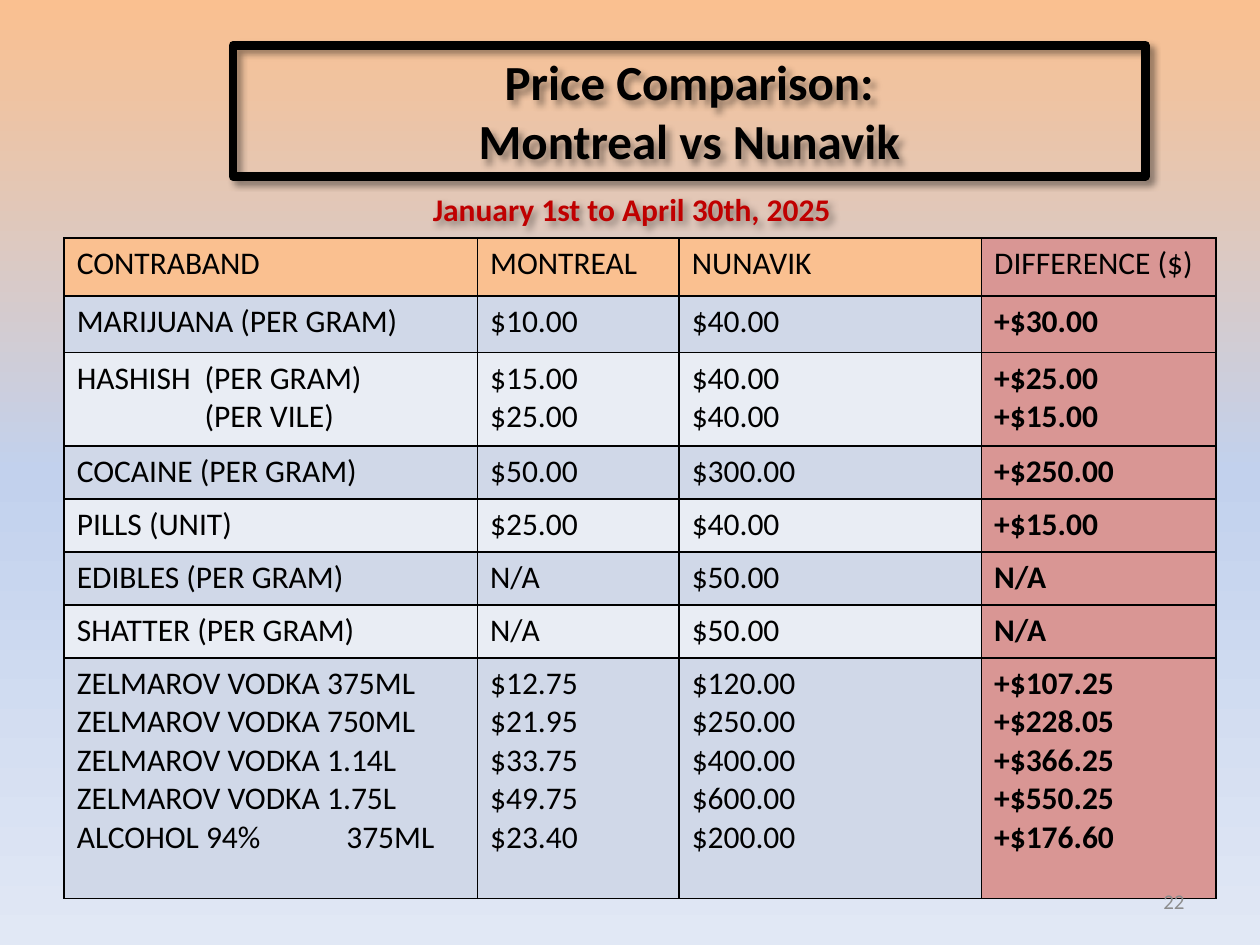
"""Build the Montreal and Nunavik price comparison slide."""
from copy import deepcopy
from dataclasses import dataclass
from typing import Optional

from lxml.etree import SubElement
from pptx import Presentation
from pptx.dml.color import RGBColor
from pptx.enum.shapes import MSO_SHAPE
from pptx.enum.text import MSO_ANCHOR, PP_ALIGN
from pptx.oxml import parse_xml
from pptx.oxml.ns import nsdecls, qn
from pptx.util import Pt

FONT = "Calibri"
COLOURS = {
    "black": "000000",
    "red": "C00000",
    "grey": "8C8C8C",
    "header": "FAC090",
    "difference": "D99694",
    "dark band": "D0D8E8",
    "light band": "E9EDF4",
    "sky middle": "C2D1ED",
    "sky bottom": "E1E8F5",
}
BACKGROUND = ((0, "header"), (0.5, "sky middle"), (1, "sky bottom"))
COLUMN_WIDTHS = (236.2, 115.2, 172.8, 133.9)


@dataclass(frozen=True)
class Label:
    text: str
    left: float
    top: float
    width: float
    height: float
    size: float
    colour: str
    align: PP_ALIGN
    bold: bool = True
    anchor: MSO_ANCHOR = MSO_ANCHOR.TOP
    right_margin: float = 7.2
    outline: Optional[float] = None
    shadow: bool = True


@dataclass(frozen=True)
class PriceRow:
    height: float
    texts: tuple[str, str, str, str]
    tabs: tuple[float, ...] = ()


LABELS = (
    Label("Price Comparison:\nMontreal vs Nunavik", 133.2, 25.9, 521.3, 74.9,
          28, "black", PP_ALIGN.CENTER, anchor=MSO_ANCHOR.MIDDLE, outline=5),
    Label("January 1st to April 30th, 2025", 133.2, 105.1, 521.3, 28.8,
          18, "red", PP_ALIGN.CENTER, right_margin=72.6),
)
PAGE_NUMBER = Label("22", 516.2, 500.4, 167.8, 28.8, 12, "grey", PP_ALIGN.RIGHT,
                    bold=False, anchor=MSO_ANCHOR.MIDDLE, shadow=False)
PRICE_ROWS = (
    PriceRow(33.1, ("CONTRABAND", "MONTREAL", "NUNAVIK", "DIFFERENCE ($)")),
    PriceRow(32.4, ("MARIJUANA (PER GRAM)", "$10.00", "$40.00", "+$30.00")),
    PriceRow(53.3, ("HASHISH\t(PER GRAM)\n\t(PER VILE)", "$15.00\n$25.00",
                    "$40.00\n$40.00", "+$25.00\n+$15.00"), (73, 73)),
    PriceRow(30.3, ("COCAINE (PER GRAM)", "$50.00", "$300.00", "+$250.00")),
    PriceRow(30.3, ("PILLS (UNIT)", "$25.00", "$40.00", "+$15.00")),
    PriceRow(30.3, ("EDIBLES (PER GRAM)", "N/A", "$50.00", "N/A")),
    PriceRow(30.3, ("SHATTER (PER GRAM)", "N/A", "$50.00", "N/A")),
    PriceRow(137.5, (
        "ZELMAROV VODKA\t375ML\nZELMAROV VODKA\t750ML\nZELMAROV VODKA\t1.14L\n"
        "ZELMAROV VODKA\t1.75L\nALCOHOL 94%\t375ML",
        "$12.75\n$21.95\n$33.75\n$49.75\n$23.40",
        "$120.00\n$250.00\n$400.00\n$600.00\n$200.00",
        "+$107.25\n+$228.05\n+$366.25\n+$550.25\n+$176.60",
    ), (143, 143, 143, 143, 154)),
)


def rgb(name: str) -> RGBColor:
    """Look up a named colour."""
    return RGBColor.from_string(COLOURS[name])


def style_text(frame, size: float, colour: str, bold: bool, align: PP_ALIGN) -> None:
    """Format every paragraph and span of a text frame."""
    for para in frame.paragraphs:
        para.alignment = align
        for span in para.runs:
            span.font.name = FONT
            span.font.size = Pt(size)
            span.font.bold = bold
            span.font.color.rgb = rgb(colour)


def paint_background(page) -> None:
    """Fill the page with a vertical gradient of three colours."""
    fill = page.background.fill
    fill.gradient()
    fill.gradient_angle = 270
    stop_list = page.element.find(".//" + qn("a:gsLst"))
    stop_list.append(deepcopy(stop_list[0]))
    for stop, (position, colour) in zip(fill.gradient_stops, BACKGROUND):
        stop.position = position
        stop.color.rgb = rgb(colour)


def add_shadow(box) -> None:
    """Give a shape a soft shadow to the lower right."""
    effects = box.element.spPr.find(qn("a:effectLst"))
    effects.append(parse_xml(
        f'<a:outerShdw {nsdecls("a")} blurRad="{Pt(4)}" dist="{Pt(3)}" dir="2700000" '
        f'algn="tl" rotWithShape="0"><a:srgbClr val="{COLOURS["black"]}">'
        '<a:alpha val="40000"/></a:srgbClr></a:outerShdw>'
    ))


def add_label(page, label: Label) -> None:
    """Draw a label, with an outline where it has one."""
    place = [Pt(n) for n in (label.left, label.top, label.width, label.height)]
    if label.outline:
        box = page.shapes.add_shape(MSO_SHAPE.RECTANGLE, *place)
        box.fill.background()
        box.line.color.rgb = rgb("black")
        box.line.width = Pt(label.outline)
    else:
        box = page.shapes.add_textbox(*place)
    box.shadow.inherit = False
    if label.shadow:
        add_shadow(box)
    frame = box.text_frame
    frame.word_wrap = True
    frame.vertical_anchor = label.anchor
    frame.margin_right = Pt(label.right_margin)
    frame.text = label.text
    style_text(frame, label.size, label.colour, label.bold, label.align)


def add_borders(cell) -> None:
    """Draw thin black borders round a cell."""
    properties = cell._tc.get_or_add_tcPr()
    for index, side in enumerate(("lnL", "lnR", "lnT", "lnB")):
        properties.insert(index, parse_xml(
            f'<a:{side} {nsdecls("a")} w="{Pt(1)}"><a:solidFill>'
            f'<a:srgbClr val="{COLOURS["black"]}"/></a:solidFill></a:{side}>'
        ))


def add_tab(para, position: float) -> None:
    """Set one left tab stop on a paragraph."""
    tab_list = SubElement(para._p.get_or_add_pPr(), qn("a:tabLst"))
    SubElement(tab_list, qn("a:tab"), pos=str(Pt(position)), algn="l")


def cell_colour(row: int, column: int) -> str:
    """Choose the fill of a table cell."""
    if column == 3:
        return "difference"
    if row == 0:
        return "header"
    return "dark band" if row % 2 else "light band"


def add_price_table(page) -> None:
    """Draw the table of prices."""
    height = sum(row.height for row in PRICE_ROWS)
    table = page.shapes.add_table(
        len(PRICE_ROWS), len(COLUMN_WIDTHS), Pt(36.7), Pt(136.1),
        Pt(sum(COLUMN_WIDTHS)), Pt(height)).table
    for column, width in zip(table.columns, COLUMN_WIDTHS):
        column.width = Pt(width)
    for r, price_row in enumerate(PRICE_ROWS):
        table.rows[r].height = Pt(price_row.height)
        for c, text in enumerate(price_row.texts):
            cell = table.cell(r, c)
            cell.fill.solid()
            cell.fill.fore_color.rgb = rgb(cell_colour(r, c))
            add_borders(cell)
            cell.text_frame.text = text
            style_text(cell.text_frame, 18, "black", r > 0 and c == 3, PP_ALIGN.LEFT)
        for para, tab in zip(table.cell(r, 0).text_frame.paragraphs, price_row.tabs):
            add_tab(para, tab)


def main() -> None:
    """Build and save the deck."""
    deck = Presentation()
    deck.slide_width, deck.slide_height = Pt(720), Pt(540)
    page = deck.slides.add_slide(deck.slide_layouts[6])
    paint_background(page)
    for label in LABELS:
        add_label(page, label)
    add_price_table(page)
    add_label(page, PAGE_NUMBER)
    deck.save("out.pptx")


if __name__ == "__main__":
    main()
